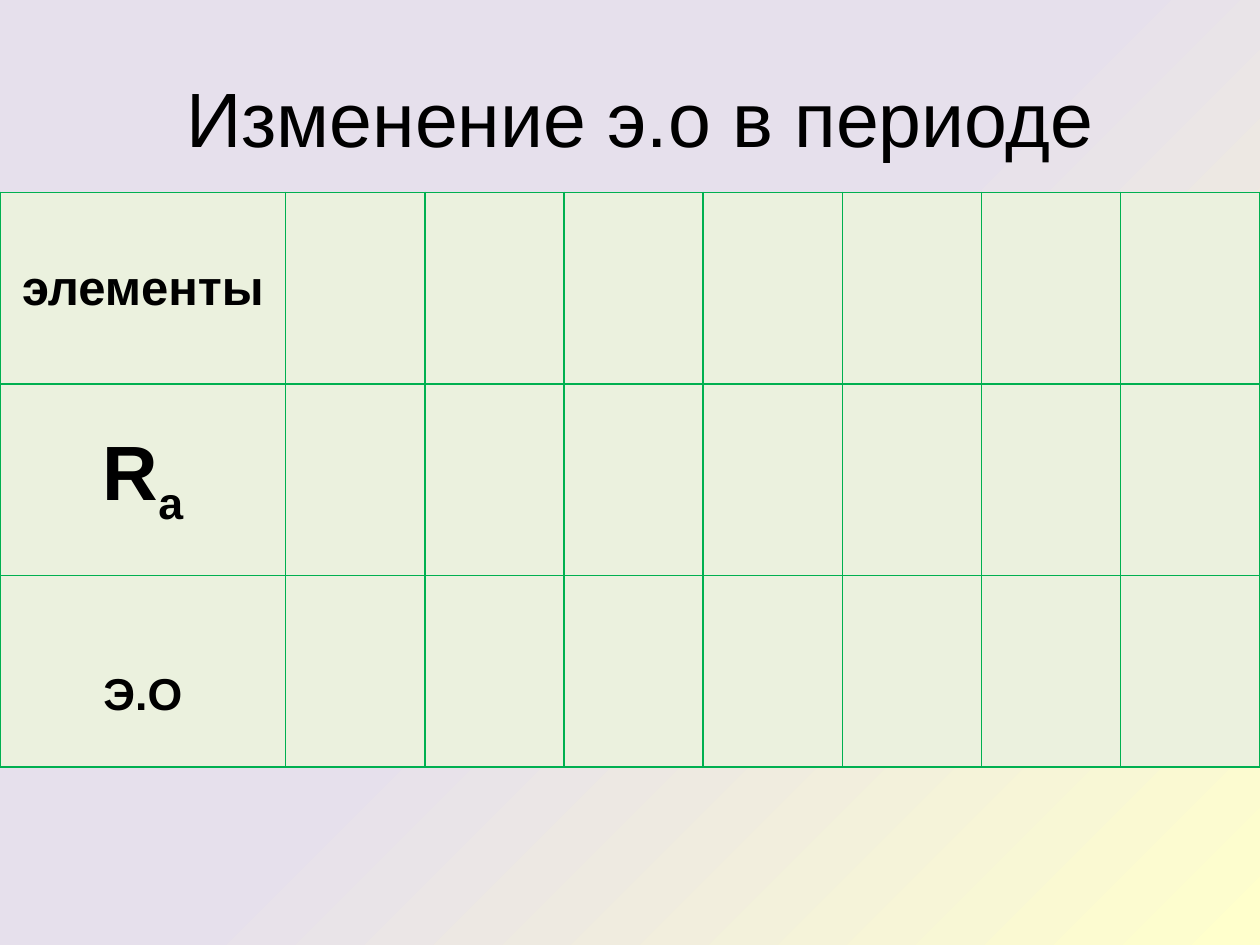
from lxml.etree import SubElement
from pptx import Presentation
from pptx.dml.color import RGBColor
from pptx.enum.text import MSO_ANCHOR, PP_ALIGN
from pptx.oxml.ns import qn
from pptx.util import Cm, Pt

# Content: each row label is a list of (text, size, subscript)
TITLE = " Изменение э.о в периоде"
ROW_LABELS = [
    [("элементы", 28, False)],
    [("R", 44, False), ("a", 44, True)],
    [("Э.О", 44, True)],
]
ELEMENT_COLUMNS = 7

FONT = "Arial"
BLACK = RGBColor(0x00, 0x00, 0x00)
GREEN = RGBColor(0x00, 0xB0, 0x50)
PALE_GREEN = RGBColor(0xEB, 0xF1, 0xDE)
YELLOW = RGBColor(0xFF, 0xFF, 0xCC)
LILAC = RGBColor(0xE6, 0xE0, 0xEC)
GRADIENT = [(0, YELLOW), (50, LILAC), (100, LILAC)]

SLIDE_WIDTH, SLIDE_HEIGHT = Cm(25.4), Cm(19.05)
TABLE_TOP, ROW_HEIGHT, LABEL_WIDTH = Cm(3.88), Cm(3.86), Cm(5.76)


def add_color(parent, color):
    SubElement(parent, qn("a:srgbClr"), val=str(color))


def paint_background(slide):
    slide.background.fill.gradient()
    gradient = slide.element.find(".//" + qn("a:gradFill"))
    for child in list(gradient):
        gradient.remove(child)
    stops = SubElement(gradient, qn("a:gsLst"))
    for position, color in GRADIENT:
        add_color(SubElement(stops, qn("a:gs"), pos=str(position * 1000)), color)
    circle = SubElement(gradient, qn("a:path"), path="circle")
    SubElement(circle, qn("a:fillToRect"), l="100000", t="100000")


def format_span(span, size, bold):
    span.font.name = FONT
    span.font.size = Pt(size)
    span.font.bold = bold
    span.font.color.rgb = BLACK


def format_cell(cell):
    properties = cell._tc.get_or_add_tcPr()
    for side in ("a:lnL", "a:lnR", "a:lnT", "a:lnB"):
        line = SubElement(properties, qn(side), w=str(Pt(1)))
        add_color(SubElement(line, qn("a:solidFill")), GREEN)
    cell.fill.solid()
    cell.fill.fore_color.rgb = PALE_GREEN
    cell.vertical_anchor = MSO_ANCHOR.MIDDLE


def write_label(cell, label):
    para = cell.text_frame.paragraphs[0]
    para.alignment = PP_ALIGN.CENTER
    for text, size, subscript in label:
        span = para.add_run()
        span.text = text
        format_span(span, size, True)
        if subscript:
            span.font._element.set("baseline", "-25000")


deck = Presentation()
deck.slide_width, deck.slide_height = SLIDE_WIDTH, SLIDE_HEIGHT
slide = deck.slides.add_slide(deck.slide_layouts[5])
paint_background(slide)

# Title
title = slide.shapes.title
title.left, title.top, title.width, title.height = Cm(1.27), Cm(0.76), Cm(22.86), Cm(3.18)
title.text_frame.text = TITLE
title.text_frame.vertical_anchor = MSO_ANCHOR.MIDDLE
title_para = title.text_frame.paragraphs[0]
title_para.alignment = PP_ALIGN.CENTER
format_span(title_para.runs[0], 44, False)

# Table: a label column, then equal columns for the elements
table = slide.shapes.add_table(
    len(ROW_LABELS), ELEMENT_COLUMNS + 1,
    0, TABLE_TOP, SLIDE_WIDTH, ROW_HEIGHT * len(ROW_LABELS),
).table
table.first_row = table.horz_banding = False
for index, column in enumerate(table.columns):
    column.width = (SLIDE_WIDTH - LABEL_WIDTH) // ELEMENT_COLUMNS if index else LABEL_WIDTH
for row, label in zip(table.rows, ROW_LABELS):
    row.height = ROW_HEIGHT
    for cell in row.cells:
        format_cell(cell)
    write_label(row.cells[0], label)

deck.save("out.pptx")
